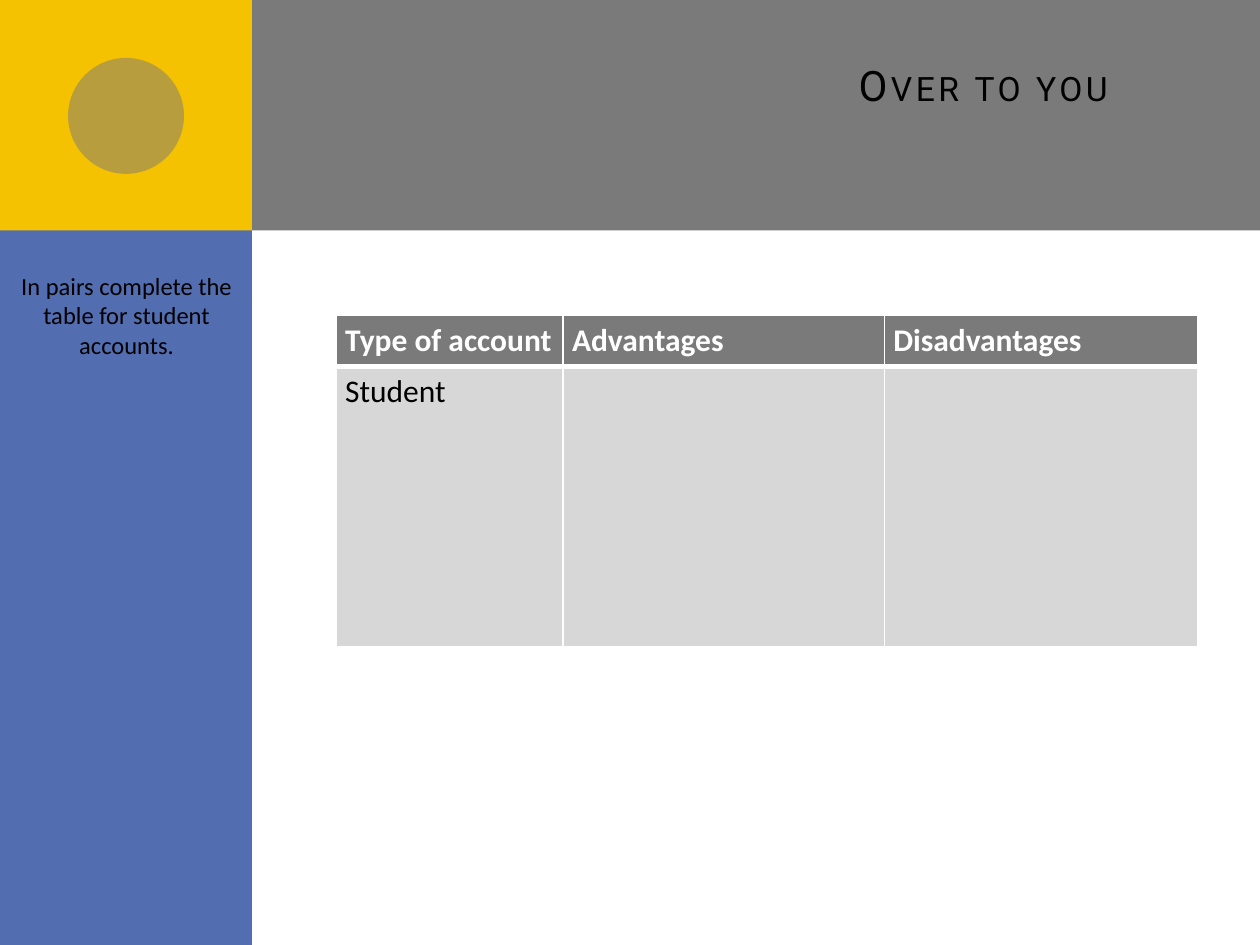
from lxml import etree
from pptx import Presentation
from pptx.dml.color import RGBColor
from pptx.enum.shapes import MSO_SHAPE
from pptx.enum.text import MSO_ANCHOR, PP_ALIGN
from pptx.oxml.ns import qn
from pptx.util import Inches, Pt

RECTANGLE, OVAL = MSO_SHAPE.RECTANGLE, MSO_SHAPE.OVAL
LEFT, CENTER, RIGHT = PP_ALIGN.LEFT, PP_ALIGN.CENTER, PP_ALIGN.RIGHT
TOP, MIDDLE = MSO_ANCHOR.TOP, MSO_ANCHOR.MIDDLE
COLORS = {
    "gray": "7A7A7A",
    "blue": "526DB0",
    "yellow": "F5C201",
    "body": "D7D7D7",
    "white": "FFFFFF",
    "black": "000000",
}


def write_text(frame, text, size=18, font="Calibri", color="black", bold=False, align=LEFT):
    para = frame.paragraphs[0]
    para.alignment = align
    span = para.add_run()
    span.text = text
    span.font.size = Pt(size)
    span.font.name = font
    span.font.bold = bold
    span.font.color.rgb = RGBColor.from_string(COLORS[color])
    return span


def add_border(cell, side, width):
    line = etree.SubElement(cell._tc.get_or_add_tcPr(), qn(f"a:ln{side}"), w=str(Pt(width)))
    fill = etree.SubElement(line, qn("a:solidFill"))
    etree.SubElement(fill, qn("a:srgbClr"), val=COLORS["white"])


deck = Presentation()
deck.slide_width, deck.slide_height = Inches(10), Inches(7.5)
page = deck.slides.add_slide(deck.slide_layouts[6])

panels = [
    (RECTANGLE, 0.5, 0, 9.5, 1.83, "gray"),
    (RECTANGLE, 0, 0, 2, 7.5, "blue"),
    (RECTANGLE, 0, 0, 2, 1.83, "yellow"),
    (OVAL, 0.54, 0.46, 0.92, 0.92, "gray"),
]
for kind, left, top, width, height, color in panels:
    panel = page.shapes.add_shape(kind, Inches(left), Inches(top), Inches(width), Inches(height))
    panel.shadow.inherit = False
    panel.line.fill.background()
    panel.fill.solid()
    panel.fill.fore_color.rgb = RGBColor.from_string(COLORS[color])
    if kind == OVAL:
        tint = panel._element.spPr.find(qn("a:solidFill"))[0]
        etree.SubElement(tint, qn("a:alpha"), val="50000")

title_box = page.shapes.add_textbox(Inches(2.67), Inches(0.25), Inches(6.83), Inches(1.25))
title_frame = title_box.text_frame
title_frame.word_wrap = True
title_frame.vertical_anchor = MIDDLE
title_frame.margin_right = Inches(0.4)
title_frame.margin_bottom = Inches(0.45)
title = write_text(title_frame, "Over to you", size=24, font="Roboto", align=RIGHT)
title_format = title._r.get_or_add_rPr()
title_format.set("spc", "200")
title_format.set("cap", "small")

rows = [["Type of account", "Advantages", "Disadvantages"], ["Student", "", ""]]
frame = page.shapes.add_table(2, 3, Inches(2.67), Inches(2.5), Inches(6.83), Inches(2.63))
table = frame.table
for column, width in zip(table.columns, (1.8, 2.55, 2.49)):
    column.width = Inches(width)
for row, height in zip(table.rows, (0.41, 2.22)):
    row.height = Inches(height)

for row_index, texts in enumerate(rows):
    header = row_index == 0
    widths = {"L": 1, "R": 1, "T": 1 if header else 3, "B": 3 if header else 1}
    for column_index, text in enumerate(texts):
        cell = table.cell(row_index, column_index)
        cell.margin_left = cell.margin_right = Inches(0.07)
        cell.margin_top = cell.margin_bottom = Inches(0.05)
        cell.vertical_anchor = TOP
        for side, width in widths.items():
            add_border(cell, side, width)
        cell.fill.solid()
        cell.fill.fore_color.rgb = RGBColor.from_string(COLORS["gray" if header else "body"])
        if text:
            write_text(cell.text_frame, text, color="white" if header else "black", bold=header)

task_box = page.shapes.add_textbox(Inches(0), Inches(2.1), Inches(2.01), Inches(0.81))
task_box.text_frame.word_wrap = True
write_text(
    task_box.text_frame,
    "In pairs complete the table for student accounts.",
    size=14,
    align=CENTER,
)

deck.save("out.pptx")
